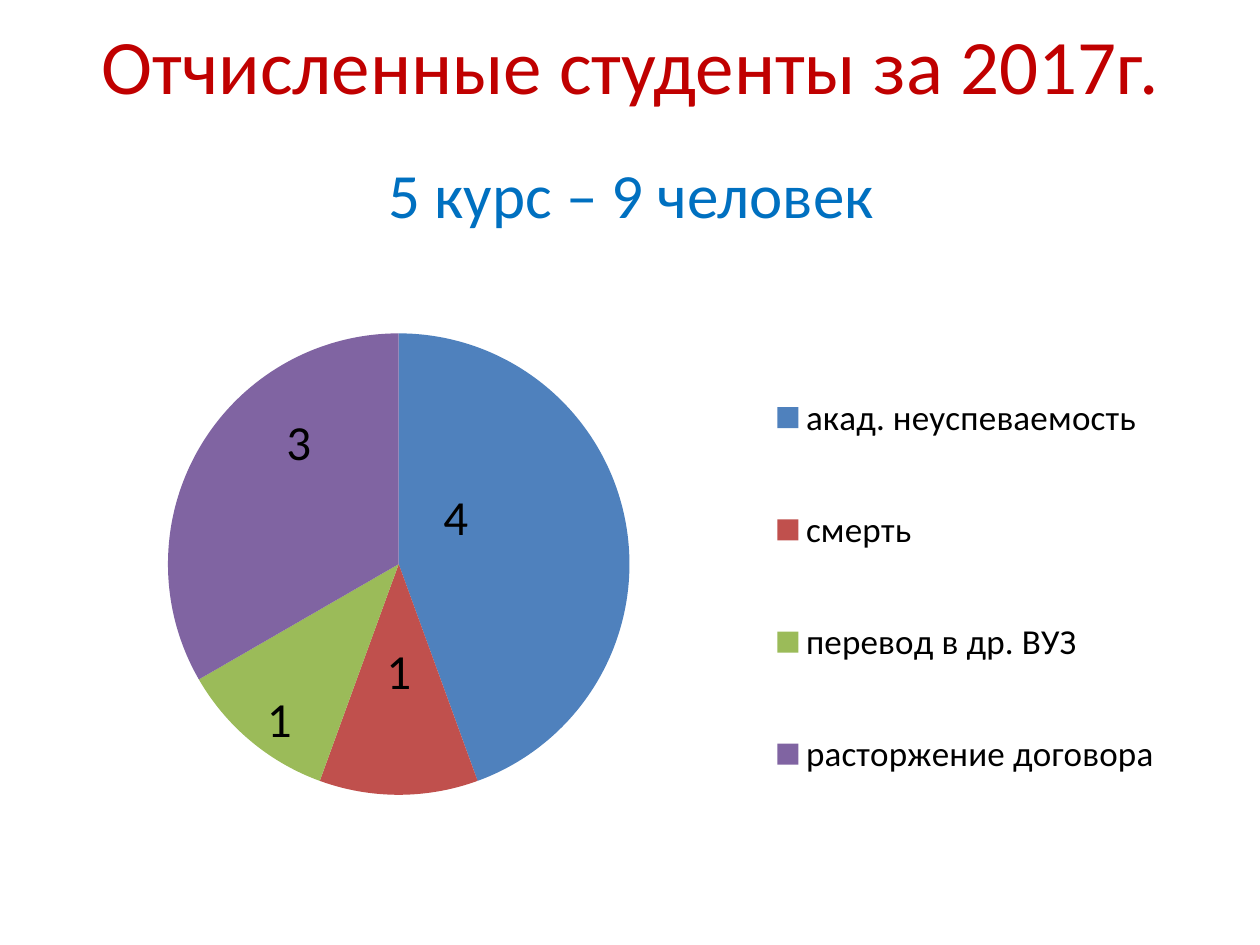
from dataclasses import dataclass

from lxml.etree import SubElement
from pptx import Presentation
from pptx.chart.data import CategoryChartData
from pptx.dml.color import RGBColor
from pptx.enum.chart import XL_CHART_TYPE as ChartType
from pptx.enum.chart import XL_LABEL_POSITION as LabelPosition
from pptx.enum.chart import XL_LEGEND_POSITION as LegendPosition
from pptx.enum.text import MSO_ANCHOR, PP_ALIGN
from pptx.oxml.ns import qn
from pptx.util import Inches, Pt


@dataclass(frozen=True)
class Theme:
    font: str = "Calibri"
    title: str = "C00000"
    subtitle: str = "0070C0"
    text: str = "000000"
    slices: tuple = ("4F81BD", "C0504D", "9BBB59", "8064A2")
    title_size: int = 44
    subtitle_size: int = 36
    label_size: int = 28
    legend_size: int = 20
    chart_size: int = 18


THEME = Theme()
LEFT, WIDTH = 0.51, 9

# reason, students, shift of the label from the middle of its slice
REASONS = [
    ("акад. неуспеваемость", 4, (-0.05, -0.04)),
    ("смерть", 1, (0, -0.01)),
    ("перевод в др. ВУЗ", 1, (-0.04, 0.11)),
    ("расторжение договора", 3, (0, -0.1)),
]


def style_font(font, size, color):
    font.name = THEME.font
    font.size = Pt(size)
    font.color.rgb = RGBColor.from_string(color)


def set_heading(shape, box, text, size, color):
    shape.left, shape.top, shape.width, shape.height = map(Inches, box)
    frame = shape.text_frame
    frame.word_wrap = True
    frame.vertical_anchor = MSO_ANCHOR.MIDDLE
    frame.text = text
    paragraph = frame.paragraphs[0]
    paragraph.alignment = PP_ALIGN.CENTER
    style_font(paragraph.font, size, color)


def set_layout(element, after, **values):
    """Give a chart part a manual layout, in fractions of the chart."""
    for old in element.findall(qn("c:layout")):
        element.remove(old)
    layout = SubElement(element, qn("c:layout"))
    manual = SubElement(layout, qn("c:manualLayout"))
    for name, value in values.items():
        SubElement(manual, qn(f"c:{name}")).set("val", str(value))
    if after is None:
        element.insert(0, layout)
    else:
        element.find(qn(after)).addnext(layout)


def add_reason_pie(slide, box):
    data = CategoryChartData()
    data.categories = [reason for reason, _, _ in REASONS]
    data.add_series("Series 1", [students for _, students, _ in REASONS])
    chart = slide.shapes.add_chart(ChartType.PIE, *map(Inches, box), data).chart
    chart.has_title = False
    style_font(chart.font, THEME.chart_size, THEME.text)

    chart.has_legend = True
    legend = chart.legend
    legend.position = LegendPosition.RIGHT
    legend.include_in_layout = False
    style_font(legend.font, THEME.legend_size, THEME.text)
    set_layout(legend._element, "c:legendPos", xMode="edge", yMode="edge",
               x=0.6, y=0.07, w=0.39, h=0.83)

    plot = chart.plots[0]
    plot.vary_by_categories = True
    set_layout(plot._element.getparent(), None, layoutTarget="inner",
               xMode="edge", yMode="edge", x=0.02, y=0.08, w=0.55, h=0.74)

    series = plot.series[0]
    labels = series.data_labels
    labels.show_value = True
    style_font(labels.font, THEME.label_size, THEME.text)
    for index, color in enumerate(THEME.slices):
        point = series.points[index]
        point.format.fill.solid()
        point.format.fill.fore_color.rgb = RGBColor.from_string(color)
        style_font(point.data_label.font, THEME.label_size, THEME.text)
        point.data_label.position = LabelPosition.CENTER
    label_elements = labels._element.findall(qn("c:dLbl"))
    for element, (_, _, (x, y)) in zip(label_elements, REASONS):
        set_layout(element, "c:idx", x=x, y=y)


def main():
    presentation = Presentation()
    presentation.slide_width, presentation.slide_height = Inches(10), Inches(7.5)
    slide = presentation.slides.add_slide(presentation.slide_layouts[5])
    set_heading(slide.shapes.title, (LEFT, 0.04, WIDTH, 0.93),
                "Отчисленные студенты за 2017г.", THEME.title_size, THEME.title)
    add_reason_pie(slide, (LEFT, 2.25, WIDTH, 4.95))
    subtitle_box = (LEFT, 1.07, WIDTH, 0.93)
    subtitle = slide.shapes.add_textbox(*map(Inches, subtitle_box))
    set_heading(subtitle, subtitle_box, "5 курс – 9 человек",
                THEME.subtitle_size, THEME.subtitle)
    presentation.save("out.pptx")


if __name__ == "__main__":
    main()
